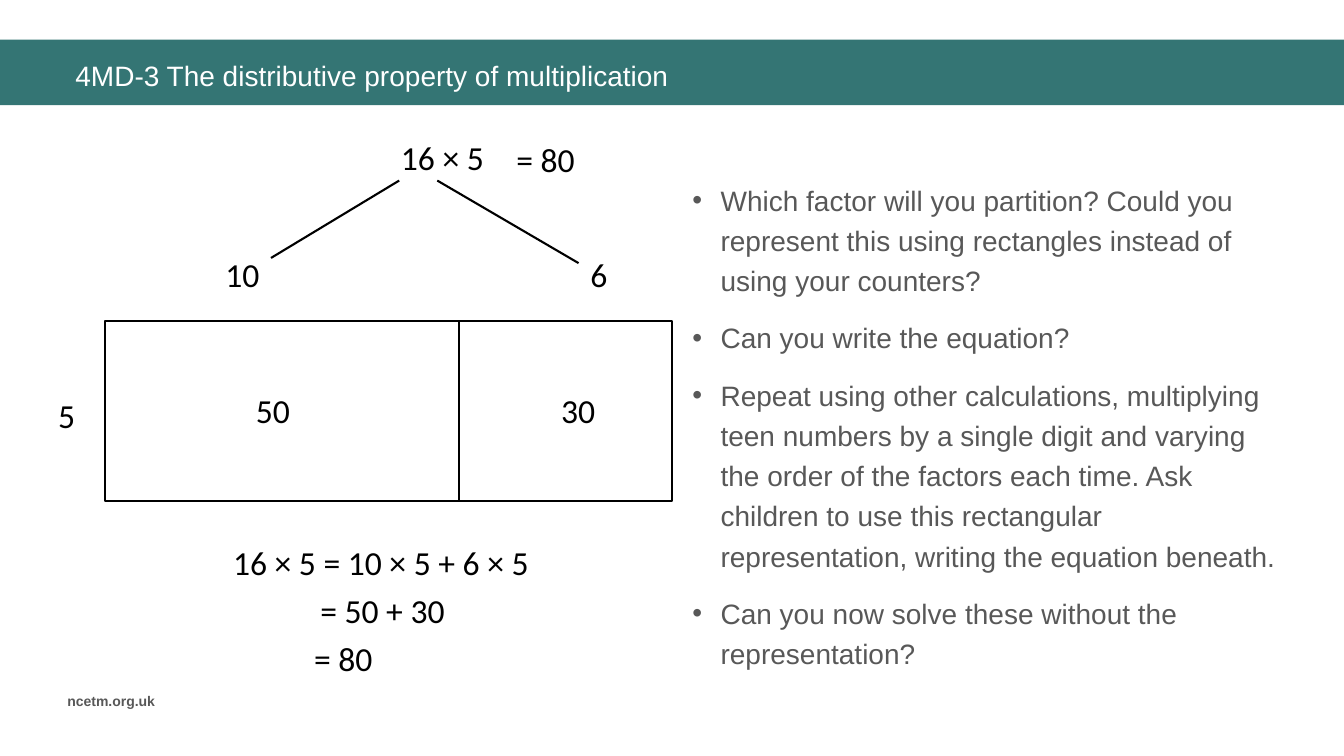
import dataclasses

import lxml.etree
import pptx
import pptx.dml.color
import pptx.enum.shapes
import pptx.enum.text
import pptx.oxml.ns
import pptx.util

Cm = pptx.util.Cm
Pt = pptx.util.Pt
Align = pptx.enum.text.PP_ALIGN
Anchor = pptx.enum.text.MSO_ANCHOR


@dataclasses.dataclass(frozen=True)
class Theme:
    teal: str = "347574"
    grey: str = "585858"
    white: str = "FFFFFF"
    black: str = "000000"
    sans: str = "Arial"
    maths: str = "Calibri"
    small: float = 10
    body: float = 20
    large: float = 24
    stroke: float = 1.5


class Board:
    """Draw styled elements on the current slide."""

    def __init__(self, deck, theme):
        self.theme = theme
        self.slide = deck.slides.add_slide(deck.slide_layouts[6])

    def color(self, name):
        return pptx.dml.color.RGBColor.from_string(name)

    def style(self, para, face, size, color, bold=False):
        para.font.name = face
        para.font.size = Pt(size)
        para.font.bold = bold
        para.font.color.rgb = self.color(color)

    def frame(self, left, top, width, height, wrap=True):
        box = self.slide.shapes.add_textbox(Cm(left), Cm(top), Cm(width), Cm(height))
        box.text_frame.word_wrap = wrap
        return box.text_frame

    def text(self, words, left, top, width, height, size, color, bold=False):
        frame = self.frame(left, top, width, height)
        frame.vertical_anchor = Anchor.MIDDLE
        para = frame.paragraphs[0]
        para.text = words
        self.style(para, self.theme.sans, size, color, bold)

    def label(self, words, mid, top, width=3):
        para = self.frame(mid - width / 2, top, width, 1.27, False).paragraphs[0]
        para.text = words
        para.alignment = Align.CENTER
        self.style(para, self.theme.maths, self.theme.large, self.theme.black)

    def rect(self, left, top, width, height, fill=None):
        kind = pptx.enum.shapes.MSO_SHAPE.RECTANGLE
        box = self.slide.shapes.add_shape(kind, Cm(left), Cm(top), Cm(width), Cm(height))
        box.shadow.inherit = False
        if fill:
            box.fill.solid()
            box.fill.fore_color.rgb = self.color(fill)
            box.line.fill.background()
        else:
            box.fill.background()
            self.ink(box.line)

    def ink(self, line):
        line.color.rgb = self.color(self.theme.black)
        line.width = Pt(self.theme.stroke)

    def line(self, *ends):
        kind = pptx.enum.shapes.MSO_CONNECTOR.STRAIGHT
        link = self.slide.shapes.add_connector(kind, *map(Cm, ends))
        self.ink(link.line)
        props = link._element.spPr
        lxml.etree.SubElement(props, pptx.oxml.ns.qn("a:effectLst"))

    def bullets(self, items, left, top, width, height):
        frame = self.frame(left, top, width, height)
        qn = pptx.oxml.ns.qn
        for index, words in enumerate(items):
            para = frame.add_paragraph() if index else frame.paragraphs[0]
            para.text = words
            para.line_spacing = 1.2
            para.space_before = Pt(6 if index else 0)
            para.space_after = Pt(6)
            props = para._p.get_or_add_pPr()
            props.set("marL", str(Cm(0.71)))
            props.set("indent", str(-Cm(0.71)))
            tint = lxml.etree.SubElement(props, qn("a:buClr"))
            lxml.etree.SubElement(tint, qn("a:srgbClr"), val=self.theme.grey)
            lxml.etree.SubElement(props, qn("a:buFont"), typeface=self.theme.sans)
            lxml.etree.SubElement(props, qn("a:buChar"), char="•")
            self.style(para, self.theme.sans, self.theme.body, self.theme.grey)


def main():
    theme = Theme()
    deck = pptx.Presentation()
    deck.slide_width, deck.slide_height = Cm(33.87), Cm(19.05)
    board = Board(deck, theme)

    board.rect(0, 1, 33.87, 1.65, theme.teal)
    board.text("4MD-3 The distributive property of multiplication",
               1.65, 1.3, 31.29, 1.19, theme.body, theme.white)
    board.text("ncetm.org.uk", 1.45, 17.32, 3.07, 0.69, theme.small, theme.grey, True)

    board.label("16 × 5", 11.15, 3.33)
    board.label("= 80", 13.75, 3.38)
    board.line(6.83, 6.5, 10.06, 4.55)
    board.line(14.58, 6.63, 11.02, 4.55)
    board.label("10", 6.11, 6.27)
    board.label("6", 15.09, 6.27)

    left, top, width, height = 2.64, 8.08, 14.3, 4.55
    split = left + width * 10 / 16
    board.rect(left, top, width, height)
    board.line(split, top, split, top + height)
    board.label("5", 1.68, 9.83)
    board.label("50", 6.88, 9.7)
    board.label("30", 14.57, 9.7)

    steps = [("16 × 5 = 10 × 5 + 6 × 5", 9.6), ("= 50 + 30", 9.64), ("= 80", 8.65)]
    for index, (words, mid) in enumerate(steps):
        board.label(words, mid, 13.54 + 1.2 * index, 9.6)

    board.bullets([
        "Which factor will you partition? Could you represent this using "
        "rectangles instead of using your counters?",
        "Can you write the equation?",
        "Repeat using other calculations, multiplying teen numbers by a single "
        "digit and varying the order of the factors each time. Ask children to "
        "use this rectangular representation, writing the equation beneath.",
        "Can you now solve these without the representation?",
    ], 17.2, 4.32, 15.47, 11.4)
    deck.save("out.pptx")


if __name__ == "__main__":
    main()
